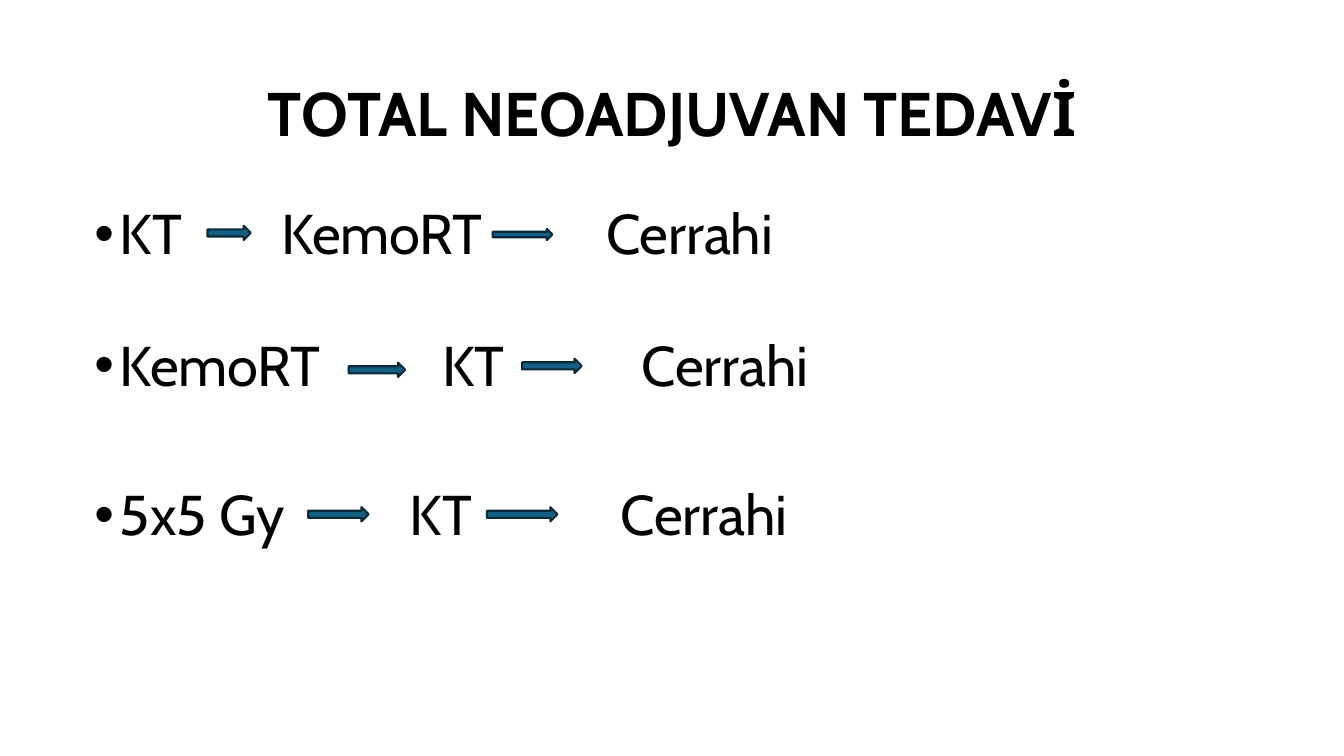
"""Builds a slide listing three total neoadjuvant treatment sequences."""
from dataclasses import dataclass

from lxml import etree
from pptx import Presentation
from pptx.dml.color import RGBColor
from pptx.enum.shapes import MSO_SHAPE
from pptx.enum.text import MSO_ANCHOR, PP_ALIGN
from pptx.oxml.ns import qn
from pptx.util import Cm, Pt

RIGHT_ARROW = MSO_SHAPE.RIGHT_ARROW
MIDDLE = MSO_ANCHOR.MIDDLE
CENTER = PP_ALIGN.CENTER
TITLE_ONLY = 5


@dataclass(frozen=True)
class Theme:
    font: str = "Cabin"
    text: RGBColor = RGBColor(0x00, 0x00, 0x00)
    arrow_fill: RGBColor = RGBColor(0x15, 0x60, 0x82)
    arrow_line: RGBColor = RGBColor(0x09, 0x2A, 0x39)
    title_size: int = 44
    body_size: int = 40
    line_width: float = 1.5
    line_spacing: float = 0.9
    indent: float = 0.64


THEME = Theme()

# Words, tab stops (cm), space before (pt)
SEQUENCES = [
    (("KT", "KemoRT", "Cerrahi"), (4.72, 12.9), 10),
    (("KemoRT", "KT", "Cerrahi"), (8.76, 13.79), 50.5),
    (("5x5 Gy", "KT", "Cerrahi"), (7.95, 13.26), 63.5),
]

# Left, top, width, height (cm)
ARROWS = [
    (5.23, 5.69, 1.09, 0.36),
    (12.42, 5.77, 1.5, 0.28),
    (8.79, 9.14, 1.42, 0.36),
    (13.16, 9.04, 1.5, 0.36),
    (7.77, 12.78, 1.52, 0.36),
    (12.27, 12.78, 1.78, 0.36),
]


def add_run(p, text, size, bold=False):
    r = p.add_run()
    r.text = text
    r.font.name = THEME.font
    r.font.size = Pt(size)
    r.font.bold = bold
    r.font.color.rgb = THEME.text


def set_title(s, text):
    sp = s.shapes.title
    sp.left, sp.top, sp.width, sp.height = Cm(2.34), Cm(1.09), Cm(29.21), Cm(3.68)
    tf = sp.text_frame
    tf.vertical_anchor = MIDDLE
    p = tf.paragraphs[0]
    p.alignment = CENTER
    p.line_spacing = THEME.line_spacing
    add_run(p, text, THEME.title_size, bold=True)


def set_bullet_and_tabs(p, stops):
    pPr = p._p.get_or_add_pPr()
    pPr.set("marL", str(Cm(THEME.indent)))
    pPr.set("indent", str(-Cm(THEME.indent)))
    etree.SubElement(pPr, qn("a:buFont"), typeface="Arial")
    etree.SubElement(pPr, qn("a:buChar"), char="•")
    tabs = etree.SubElement(pPr, qn("a:tabLst"))
    for stop in stops:
        etree.SubElement(tabs, qn("a:tab"), pos=str(Cm(stop)), algn="l")


def add_sequences(s, sequences):
    sp = s.shapes.add_textbox(Cm(2.13), Cm(5.08), Cm(29.21), Cm(12.09))
    tf = sp.text_frame
    tf.word_wrap = True
    for i, (words, stops, space_before) in enumerate(sequences):
        p = tf.add_paragraph() if i else tf.paragraphs[0]
        p.line_spacing = THEME.line_spacing
        p.space_before = Pt(space_before)
        set_bullet_and_tabs(p, stops)
        add_run(p, "\t".join(words), THEME.body_size)


def add_arrow(s, left, top, width, height):
    sp = s.shapes.add_shape(RIGHT_ARROW, Cm(left), Cm(top), Cm(width), Cm(height))
    sp.shadow.inherit = False
    sp.fill.solid()
    sp.fill.fore_color.rgb = THEME.arrow_fill
    sp.line.color.rgb = THEME.arrow_line
    sp.line.width = Pt(THEME.line_width)


def main():
    prs = Presentation()
    prs.slide_width, prs.slide_height = Cm(33.87), Cm(19.05)
    s = prs.slides.add_slide(prs.slide_layouts[TITLE_ONLY])
    set_title(s, "TOTAL NEOADJUVAN TEDAVİ")
    add_sequences(s, SEQUENCES)
    for arrow in ARROWS:
        add_arrow(s, *arrow)
    prs.save("out.pptx")


if __name__ == "__main__":
    main()
